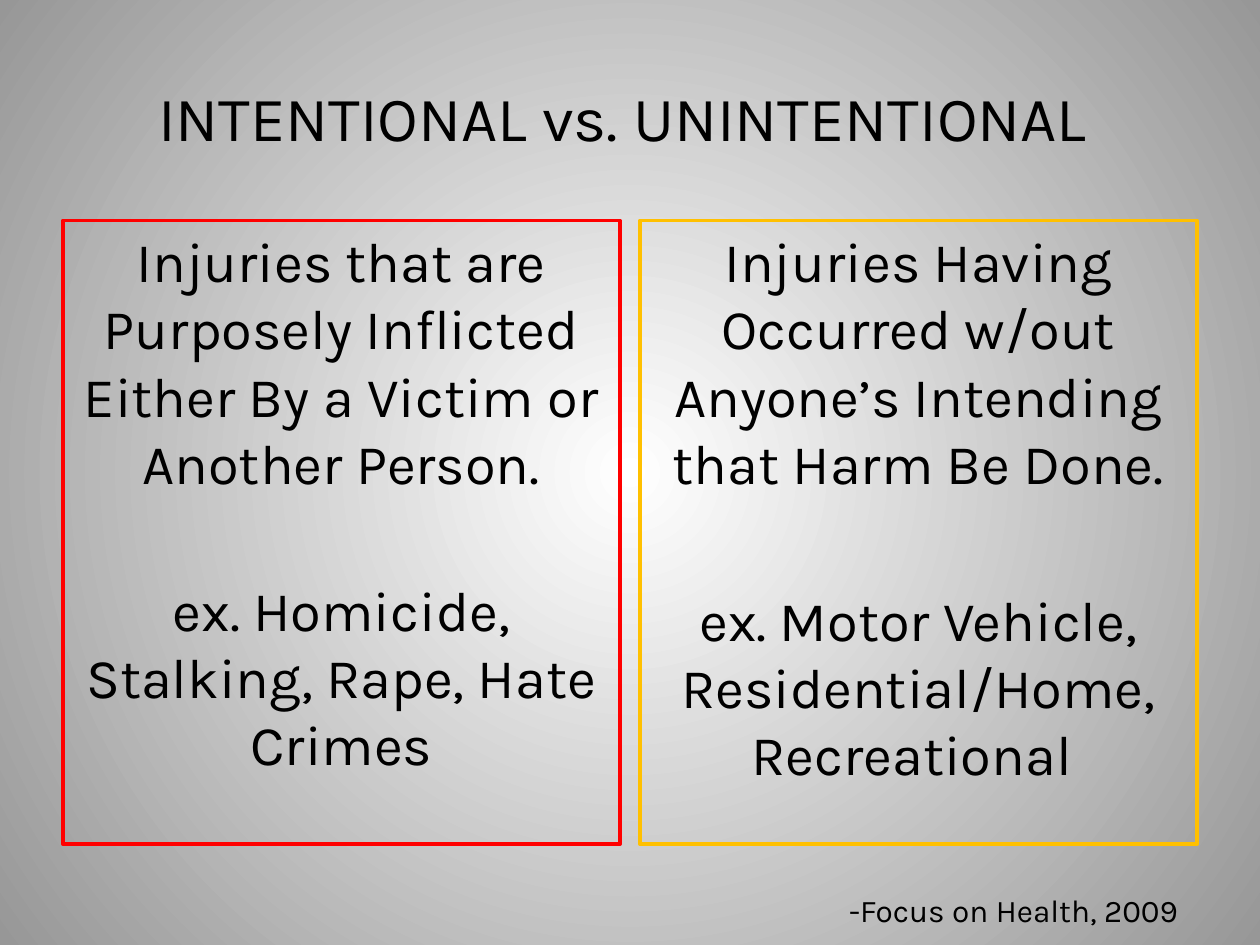
import pptx
import pptx.util
import pptx.dml.color
import pptx.enum.shapes
import pptx.enum.text
import pptx.oxml
import pptx.oxml.ns

Inches = pptx.util.Inches
Pt = pptx.util.Pt
ALIGN = pptx.enum.text.PP_ALIGN
ANCHOR = pptx.enum.text.MSO_ANCHOR

HUES = {"ink": "000000", "core": "FFFFFF", "edge": "979797",
        "red": "FF0000", "gold": "FFC000"}


def tint(name):
    return pptx.dml.color.RGBColor.from_string(HUES[name])


class Deck:
    """Holds the text style and the current slide."""

    def __init__(self, font):
        self.font = font
        self.show = pptx.Presentation()
        self.show.slide_width = Inches(10)
        self.show.slide_height = Inches(7.5)
        self.slide = self.show.slides.add_slide(self.show.slide_layouts[6])

    def glow(self, core, edge):
        """Round gradient backdrop spreading from the centre."""
        fill = self.slide.background.fill
        fill.gradient()
        for stop, name in zip(fill.gradient_stops, (core, edge)):
            stop.color.rgb = tint(name)
        space = pptx.oxml.ns.nsdecls("a")
        ring = pptx.oxml.parse_xml(
            f'<a:path {space} path="circle"><a:fillToRect l="50000" '
            't="50000" r="50000" b="50000"/></a:path>')
        line = next(self.slide.element.iter(pptx.oxml.ns.qn("a:lin")))
        line.getparent().replace(line, ring)

    def words(self, frame, paras, size, align, anchor):
        """Fill a frame; each paragraph is (space before, runs)."""
        frame.word_wrap = True
        frame.vertical_anchor = anchor
        for i, (gap, runs) in enumerate(paras):
            para = frame.add_paragraph() if i else frame.paragraphs[0]
            para.alignment = align
            para.space_before = Pt(gap)
            for part in runs:
                run = para.add_run()
                run.text = part
                run.font.name = self.font
                run.font.size = Pt(size)
                run.font.color.rgb = tint("ink")

    def label(self, spot, runs, size, align, anchor=ANCHOR.TOP):
        box = self.slide.shapes.add_textbox(*map(Inches, spot))
        self.words(box.text_frame, [(0, runs)], size, align, anchor)

    def panel(self, spot, hue, paras, size):
        """Outlined box with centred text from the top."""
        box = self.slide.shapes.add_shape(
            pptx.enum.shapes.MSO_SHAPE.RECTANGLE, *map(Inches, spot))
        box.shadow.inherit = False
        box.fill.background()
        box.line.color.rgb = tint(hue)
        box.line.width = Pt(2.25)
        self.words(box.text_frame, paras, size, ALIGN.CENTER, ANCHOR.TOP)


def main():
    deck = Deck("Karla")
    deck.glow("core", "edge")

    # Title
    deck.label((0.5, 0.3, 9, 1.25), ["INTENTIONAL", " vs. ", "UNINTENTIONAL "],
               36, ALIGN.CENTER, ANCHOR.MIDDLE)

    # Two kinds of injury: hue, meaning, gap, examples
    kinds = [
        ("red", "Injuries that are Purposely Inflicted Either By a Victim or "
         "Another Person.", 45.6, "ex. Homicide, Stalking, Rape, Hate Crimes"),
        ("gold", "Injuries Having Occurred w/out Anyone’s Intending that Harm "
         "Be Done.", 51.2, "ex. Motor Vehicle, Residential/Home, Recreational "),
    ]
    left, wide, step = 0.5, 4.42, 4.58
    for i, (hue, sense, gap, cases) in enumerate(kinds):
        deck.panel((left + i * step, 1.75, wide, 4.95), hue,
                   [(6.4, [sense]), (gap, [cases])], 32)

    # Source line
    deck.label((5.28, 7.02, 4.17, 0.4), ["-Focus on Health, 2009"],
               18, ALIGN.RIGHT)

    deck.show.save("out.pptx")


if __name__ == "__main__":
    main()
